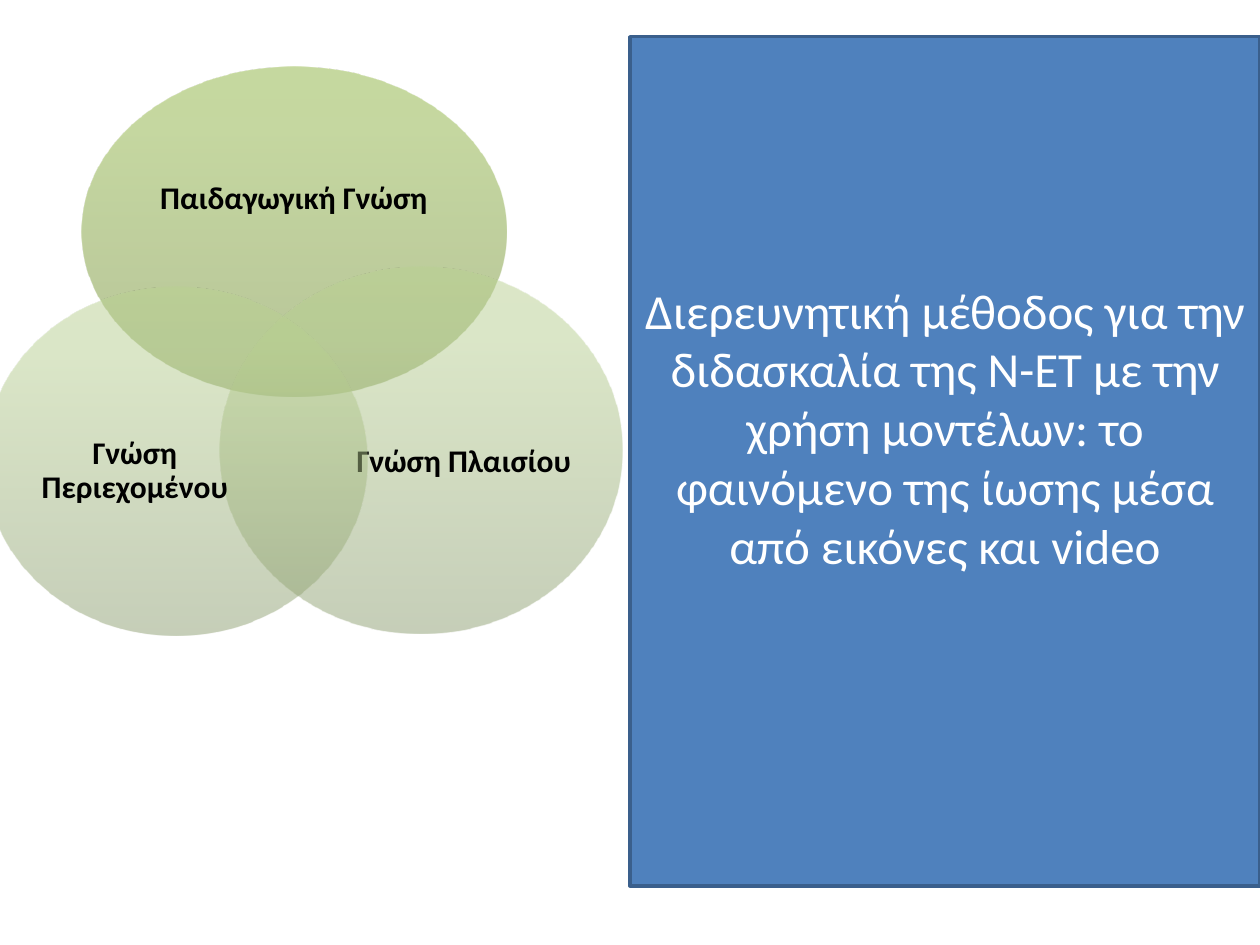
"""Venn diagram of three kinds of knowledge beside a panel with the teaching topic."""
import dataclasses

import lxml.etree
import pptx
import pptx.dml.color
import pptx.enum.shapes
import pptx.enum.text
import pptx.oxml.ns
import pptx.util

Cm = pptx.util.Cm
Pt = pptx.util.Pt
RGB = pptx.dml.color.RGBColor.from_string
SHAPE = pptx.enum.shapes.MSO_SHAPE
qn = pptx.oxml.ns.qn


@dataclasses.dataclass(frozen=True)
class Theme:
    font: str = "Calibri"
    label_size: int = 18
    topic_size: int = 28
    label: str = "000000"
    topic: str = "FFFFFF"
    panel: str = "4F81BD"
    border: str = "3A5F8C"
    strong: tuple = ((0, "6C8932"), (80, "8DB141"), (100, "8EB43F"))
    soft: tuple = ((0, "8E9F71"), (80, "B8CF92"), (100, "B9D192"))
    opacity: int = 50


class Deck:
    def __init__(self, theme):
        self.theme = theme
        self.prs = pptx.Presentation()
        self.prs.slide_width, self.prs.slide_height = Cm(25.4), Cm(19.05)
        self.s = self.prs.slides.add_slide(self.prs.slide_layouts[6])

    def add_text(self, sp, text, size, color, bold=False):
        tf = sp.text_frame
        tf.word_wrap = True
        tf.vertical_anchor = pptx.enum.text.MSO_ANCHOR.MIDDLE
        p = tf.paragraphs[0]
        p.alignment = pptx.enum.text.PP_ALIGN.CENTER
        r = p.add_run()
        r.text = text
        r.font.name, r.font.size, r.font.bold = self.theme.font, Pt(size), bold
        r.font.color.rgb = RGB(color)
        return tf

    def circle(self, box, stops):
        sp = self.s.shapes.add_shape(SHAPE.OVAL, *map(Cm, box))
        sp.shadow.inherit = False
        sp.line.fill.background()
        sp.fill.gradient()
        sp.fill.gradient_angle = 90
        stop_list = sp._element.spPr.find(".//" + qn("a:gsLst"))
        for old in list(stop_list):
            stop_list.remove(old)
        for pos, color in stops:
            gs = lxml.etree.SubElement(stop_list, qn("a:gs"), pos=str(pos * 1000))
            clr = lxml.etree.SubElement(gs, qn("a:srgbClr"), val=color)
            lxml.etree.SubElement(clr, qn("a:alpha"), val=str(self.theme.opacity * 1000))

    def label(self, box, text):
        sp = self.s.shapes.add_textbox(*map(Cm, box))
        tf = self.add_text(sp, text, self.theme.label_size, self.theme.label, bold=True)
        tf.margin_left = tf.margin_right = tf.margin_top = tf.margin_bottom = 0
        tf.paragraphs[0].line_spacing = 0.9

    def panel(self, box, text):
        sp = self.s.shapes.add_shape(SHAPE.RECTANGLE, *map(Cm, box))
        sp.shadow.inherit = False
        sp.fill.solid()
        sp.fill.fore_color.rgb = RGB(self.theme.panel)
        sp.line.color.rgb = RGB(self.theme.border)
        sp.line.width = Pt(2)
        tf = self.add_text(sp, text, self.theme.topic_size, self.theme.topic)
        tf.margin_bottom = Cm(1.5)


def main():
    theme = Theme()
    deck = Deck(theme)
    knowledge = [
        ("Παιδαγωγική Γνώση", theme.strong, (1.65, 1.35, 8.56, 6.65), (2.79, 2.51, 6.27, 3)),
        ("Γνώση Πλαισίου", theme.soft, (4.42, 5.38, 8.13, 7.39), (6.91, 7.29, 4.88, 4.06)),
        ("Γνώση Περιεχομένου", theme.soft, (-0.3, 5.77, 7.7, 7.04), (0.41, 7.57, 4.62, 3.86)),
    ]
    for text, stops, circle_box, label_box in knowledge:
        deck.circle(circle_box, stops)
        deck.label(label_box, text)
    deck.panel(
        (12.7, 0.74, 12.7, 17.12),
        "Διερευνητική μέθοδος για την διδασκαλία της Ν-ΕΤ με την χρήση μοντέλων: "
        "το φαινόμενο της ίωσης μέσα από εικόνες και video",
    )
    deck.prs.save("out.pptx")


if __name__ == "__main__":
    main()
